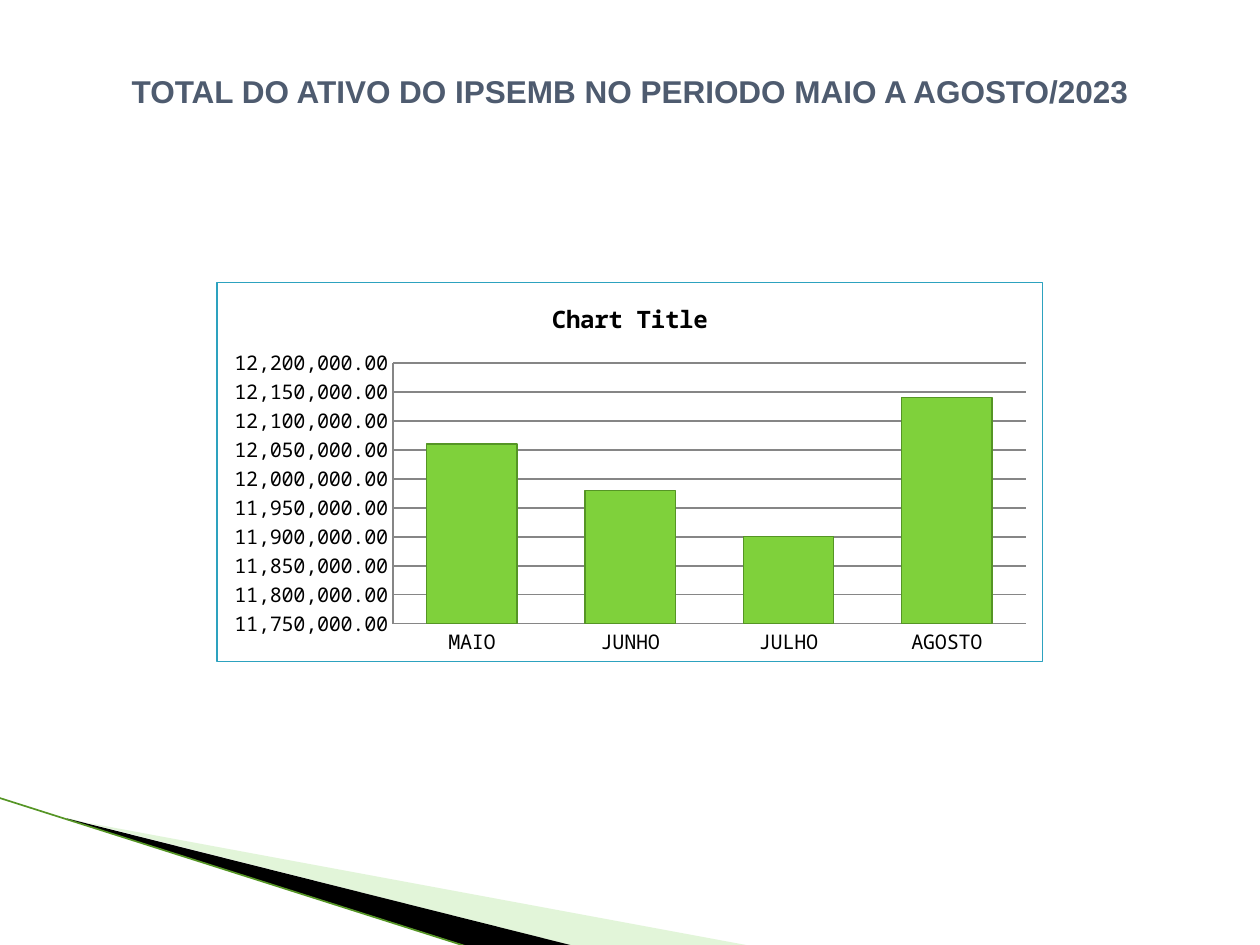
from dataclasses import dataclass

from lxml import etree
from pptx import Presentation
from pptx import util as u
from pptx.chart.data import CategoryChartData
from pptx.dml.color import RGBColor
from pptx.enum import chart as ch
from pptx.enum import shapes, text
from pptx.oxml import parse_xml
from pptx.oxml.ns import nsdecls, qn

Cm, Pt = u.Cm, u.Pt

BLACK = RGBColor(0x00, 0x00, 0x00)
PALE_GREEN = RGBColor(0xB8, 0xE7, 0xA1)
GREEN = RGBColor(0x7F, 0xD1, 0x3B)
DARK_GREEN = RGBColor(0x55, 0x95, 0x25)
SLATE = RGBColor(0x4E, 0x5B, 0x6F)
TEAL = RGBColor(0x2D, 0xA2, 0xBF)
GREY = RGBColor(0x86, 0x86, 0x86)


@dataclass
class Wedge:
    points: list[tuple[float, float]]
    color: RGBColor
    opacity: int = 100


WEDGES = [
    Wedge([(1.4, 16.52), (15.2, 19.08), (11.6, 19.08), (1.4, 16.5)], PALE_GREEN, 40),
    Wedge([(1.35, 16.5), (11.61, 19.08), (9.5, 19.1), (1.37, 16.52)], BLACK),
]
TOTALS = {"MAIO": 12_060_000, "JUNHO": 11_980_000, "JULHO": 11_900_000, "AGOSTO": 12_140_000}


def add_wedge(s, wedge: Wedge) -> None:
    start, *rest = [(Cm(x), Cm(y)) for x, y in wedge.points]
    builder = s.shapes.build_freeform(*start)
    builder.add_line_segments(rest, close=True)
    sp = builder.convert_to_shape()
    sp.shadow.inherit = False
    sp.line.fill.background()
    sp.fill.solid()
    sp.fill.fore_color.rgb = wedge.color
    if wedge.opacity < 100:
        color = sp.fill._xPr.find(qn("a:solidFill"))[0]
        etree.SubElement(color, qn("a:alpha"), val=str(wedge.opacity * 1000))


def add_edge(s) -> None:
    line = s.shapes.add_connector(
        shapes.MSO_CONNECTOR.STRAIGHT, Cm(-0.03), Cm(16.08), Cm(9.47), Cm(19.1))
    line.line.color.rgb = DARK_GREEN
    line.line.width = Pt(0.95)
    etree.SubElement(line._element.spPr, qn("a:effectLst"))


def add_title(s) -> None:
    tf = s.shapes.add_textbox(Cm(1.11), Cm(1.32), Cm(23.19), Cm(1.02)).text_frame
    tf.word_wrap = True
    tf.text = "TOTAL DO ATIVO DO IPSEMB NO PERIODO MAIO A AGOSTO/2023"
    p = tf.paragraphs[0]
    p.alignment = text.PP_ALIGN.CENTER
    font = p.runs[0].font
    font.name, font.size, font.bold = "Arial", Pt(18), True
    font.color.rgb = SLATE


def set_font(font, size: float, bold: bool = False) -> None:
    font.name, font.size, font.bold = "Noto Sans Mono", Pt(size), bold
    font.color.rgb = BLACK


def add_totals_chart(s) -> None:
    data = CategoryChartData(number_format="#,##0.00")
    data.categories = list(TOTALS)
    data.add_series("Series 1", list(TOTALS.values()))
    chart = s.shapes.add_chart(
        ch.XL_CHART_TYPE.COLUMN_CLUSTERED, Cm(4.36), Cm(5.68), Cm(16.67), Cm(7.67), data).chart
    set_font(chart.font, 11.5)
    chart.has_legend = False
    chart.has_title = True
    tf = chart.chart_title.text_frame
    tf.text = "Chart Title"
    set_font(tf.paragraphs[0].runs[0].font, 13.8, bold=True)
    chart.chart_title.include_in_layout = False

    # Columns
    plot = chart.plots[0]
    plot.gap_width = 75
    plot.vary_by_categories = False
    bars = plot.series[0].format
    bars.fill.solid()
    bars.fill.fore_color.rgb = GREEN
    bars.line.color.rgb = DARK_GREEN
    bars.line.width = Pt(0.75)

    # Axes
    values = chart.value_axis
    values.minimum_scale, values.maximum_scale = 11_750_000, 12_200_000
    values.major_unit = 50_000
    values.has_major_gridlines = True
    values.tick_labels.number_format = "#,##0.00"
    values.tick_labels.number_format_is_linked = False
    for axis in (values, chart.category_axis):
        axis.major_tick_mark = ch.XL_TICK_MARK.NONE
        axis.minor_tick_mark = ch.XL_TICK_MARK.NONE
    for part in (values, chart.category_axis, values.major_gridlines):
        part.format.line.color.rgb = GREY
        part.format.line.width = Pt(0.95)

    # Plot area position
    area = chart._chartSpace.chart.plotArea
    for old in area.findall(qn("c:layout")):
        area.remove(old)
    area.insert(0, parse_xml(
        f'<c:layout {nsdecls("c")}><c:manualLayout><c:layoutTarget val="inner"/>'
        '<c:xMode val="edge"/><c:yMode val="edge"/><c:x val="0.213"/><c:y val="0.213"/>'
        '<c:w val="0.767"/><c:h val="0.687"/></c:manualLayout></c:layout>'))

    # Frame around the chart
    chart._chartSpace.chart.addnext(parse_xml(
        f'<c:spPr {nsdecls("c", "a")}><a:noFill/><a:ln w="{Pt(0.75)}"><a:solidFill>'
        f'<a:srgbClr val="{TEAL}"/></a:solidFill></a:ln></c:spPr>'))


def main() -> None:
    prs = Presentation()
    prs.slide_width, prs.slide_height = Cm(25.4), Cm(19.05)
    s = prs.slides.add_slide(prs.slide_layouts[6])

    # Corner decoration
    for wedge in WEDGES:
        add_wedge(s, wedge)
    add_edge(s)

    # Content
    add_title(s)
    add_totals_chart(s)
    prs.save("out.pptx")


if __name__ == "__main__":
    main()
